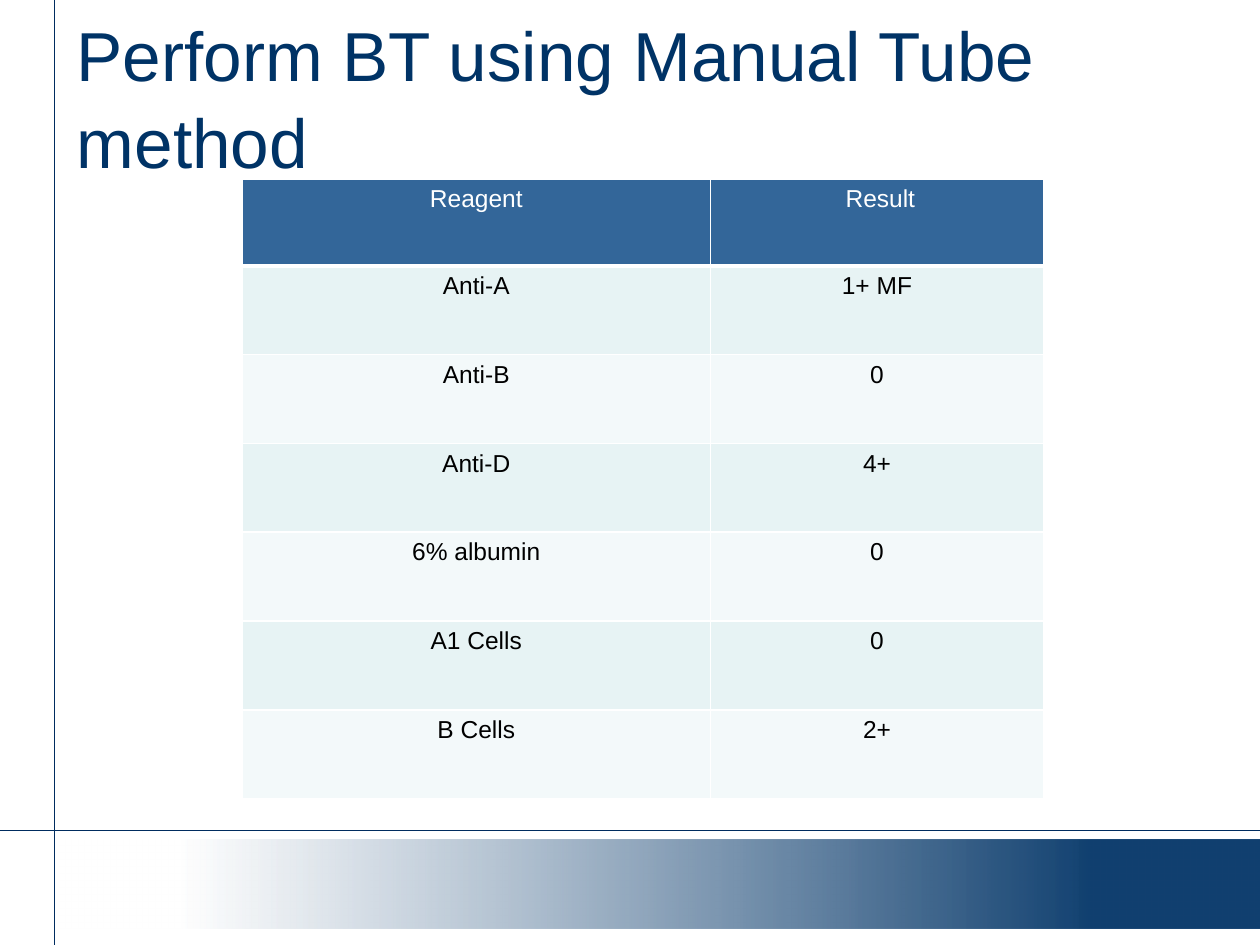
from dataclasses import dataclass

from pptx import Presentation
from pptx.dml.color import RGBColor as Rgb
from pptx.enum.shapes import MSO_CONNECTOR as Connector, MSO_SHAPE as Shape
from pptx.enum.text import MSO_ANCHOR as Anchor, MSO_AUTO_SIZE as AutoSize, PP_ALIGN as Align
from pptx.oxml.ns import qn
from pptx.util import Inches, Pt
from lxml.etree import SubElement


@dataclass(frozen=True)
class Theme:
    font: str = "Arial"
    title_size: float = 39.6
    cell_size: float = 14
    navy: str = "003366"
    rule: str = "002C5F"
    header: str = "336699"
    bands: tuple = ("E7F3F4", "F3F9FA")
    white: str = "FFFFFF"
    black: str = "000000"


THEME = Theme()
WIDTH, HEIGHT = 10, 7.5
TITLE_BOX = (0.51, 0.13, 9.29, 1.26)
TABLE_BOX = (1.92, 1.42, 6.36, 4.92)
BAND_BOX = (0.47, 6.66, 9.53, 0.71)
RULE_X, RULE_Y = 0.43, 6.59
COLUMN_SHARES = (0.585, 0.415)
RESULTS = [
    ("Reagent", " Result"),
    ("Anti-A", "1+ MF"),
    ("Anti-B", "0"),
    ("Anti-D", "4+"),
    ("6% albumin", "0"),
    ("A1 Cells", "0"),
    ("B Cells", "2+"),
]


def to_lengths(box):
    return [Inches(value) for value in box]


def style_font(font, size, color):
    font.name, font.size = THEME.font, Pt(size)
    font.bold = False
    font.color.rgb = Rgb.from_string(color)


def add_rule(slide, *ends):
    line = slide.shapes.add_connector(Connector.STRAIGHT, *to_lengths(ends))
    line.line.color.rgb = Rgb.from_string(THEME.rule)
    line.line.width = Pt(0.75)
    SubElement(line._element.spPr, qn("a:effectLst"))


def add_gradient_band(slide, box):
    band = slide.shapes.add_shape(Shape.RECTANGLE, *to_lengths(box))
    band.shadow.inherit = False
    band.line.fill.background()
    band.fill.gradient()
    band.fill.gradient_angle = 0
    stops = ((0.10, THEME.white), (0.86, THEME.navy))
    for stop, (position, color) in zip(band.fill.gradient_stops, stops):
        stop.position = position
        stop.color.rgb = Rgb.from_string(color)
    # Opacity of each stop, in percent
    for color, opacity in zip(band._element.spPr.iter(qn("a:srgbClr")), (77, 93)):
        SubElement(color, qn("a:alpha"), val=str(opacity * 1000))


def place_title(slide, box, text):
    title = slide.shapes.title
    title.left, title.top, title.width, title.height = to_lengths(box)
    frame = title.text_frame
    frame.text = text
    frame.word_wrap = True
    frame.auto_size = AutoSize.NONE
    frame.vertical_anchor = Anchor.MIDDLE
    paragraph = frame.paragraphs[0]
    paragraph.alignment = Align.LEFT
    paragraph.line_spacing = 1.04
    style_font(paragraph.runs[0].font, THEME.title_size, THEME.navy)


def set_borders(cell, bottom_width):
    properties = cell._tc.get_or_add_tcPr()
    widths = {"lnL": 1, "lnR": 1, "lnT": 1, "lnB": bottom_width}
    for index, (side, width) in enumerate(widths.items()):
        border = SubElement(properties, qn(f"a:{side}"), w=str(Pt(width)))
        fill = SubElement(border, qn("a:solidFill"))
        SubElement(fill, qn("a:srgbClr"), val=THEME.white)
        properties.insert(index, border)  # borders precede the fill


def format_cell(cell, text, is_header, band):
    cell.text = text
    cell.fill.solid()
    cell.fill.fore_color.rgb = Rgb.from_string(THEME.header if is_header else band)
    paragraph = cell.text_frame.paragraphs[0]
    paragraph.alignment = Align.CENTER
    color = THEME.white if is_header else THEME.black
    style_font(paragraph.runs[0].font, THEME.cell_size, color)
    set_borders(cell, 3 if is_header else 1)


def add_results_table(slide, box, rows):
    frame = slide.shapes.add_table(len(rows), len(rows[0]), *to_lengths(box))
    table = frame.table
    for column, share in zip(table.columns, COLUMN_SHARES):
        column.width = Inches(box[2] * share)
    # The header row is slightly lower than the equal body rows
    header_height = 0.69
    body_height = (box[3] - header_height) / (len(rows) - 1)
    for index, values in enumerate(rows):
        table.rows[index].height = Inches(body_height if index else header_height)
        for column, text in enumerate(values):
            band = THEME.bands[(index - 1) % 2]
            format_cell(table.cell(index, column), text, index == 0, band)


def main():
    presentation = Presentation()
    presentation.slide_width, presentation.slide_height = Inches(WIDTH), Inches(HEIGHT)
    slide = presentation.slides.add_slide(presentation.slide_layouts[5])

    # Frame of the page
    add_rule(slide, 0, RULE_Y, WIDTH, RULE_Y)
    add_rule(slide, RULE_X, 0, RULE_X, HEIGHT)
    add_gradient_band(slide, BAND_BOX)

    # Content
    place_title(slide, TITLE_BOX, "Perform BT using Manual Tube method")
    add_results_table(slide, TABLE_BOX, RESULTS)

    presentation.save("out.pptx")


if __name__ == "__main__":
    main()
